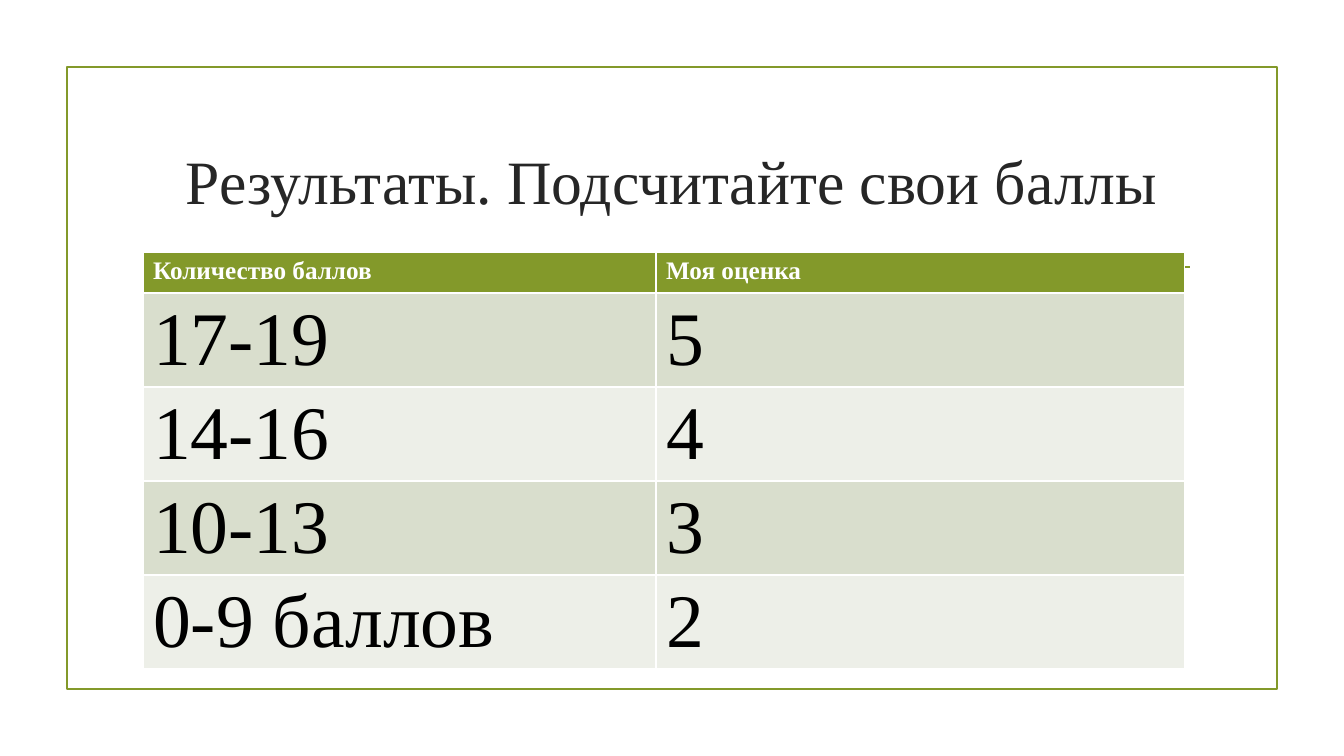
from pptx import Presentation
from pptx import util as u
from pptx.dml.color import RGBColor
from pptx.enum import shapes, text
from pptx.oxml.ns import qn
from lxml import etree

TITLE = "Результаты. Подсчитайте свои баллы"
GRADES = [
    ("Количество баллов", "Моя оценка"),
    ("17-19", "5"),
    ("14-16", "4"),
    ("10-13", "3"),
    ("0-9 баллов", "2"),
]
FONT = "Times New Roman"
GREEN = "83992A"
BANDS = ("EDEFE8", "D9DECD")
COLUMN_WIDTHS = (513, 529)
HEADER_HEIGHT, ROW_HEIGHT = 41, 94


def px(value):
    return u.Emu(round(value * 914400 / 100.8))


def box(*lengths):
    return [px(length) for length in lengths]


def color(value):
    return RGBColor.from_string(value)


def style_text(paragraph, size, value, bold=False):
    for run in paragraph.runs:
        run.font.name = FONT
        run.font.size = u.Pt(size)
        run.font.bold = bold
        run.font.color.rgb = color(value)


def style_line(shape):
    shape.line.color.rgb = color(GREEN)
    shape.line.width = u.Pt(1.25)


def add_frame(slide):
    frame = slide.shapes.add_shape(shapes.MSO_SHAPE.RECTANGLE, *box(67, 67, 1210, 622))
    frame.shadow.inherit = False
    frame.fill.background()
    style_line(frame)
    rule = slide.shapes.add_connector(
        shapes.MSO_CONNECTOR.STRAIGHT, *box(154, 267, 1190, 267))
    style_line(rule)
    etree.SubElement(rule._element.spPr, qn("a:effectLst"))


def fill_title(slide):
    title = slide.shapes.title
    title.left, title.top, title.width, title.height = box(143, 108, 1058, 144)
    frame = title.text_frame
    frame.text = TITLE
    frame.vertical_anchor = text.MSO_ANCHOR.MIDDLE
    frame.paragraphs[0].alignment = text.PP_ALIGN.CENTER
    style_text(frame.paragraphs[0], 44, "262626")


def add_grades(slide):
    heights = [HEADER_HEIGHT] + [ROW_HEIGHT] * (len(GRADES) - 1)
    table = slide.shapes.add_table(
        len(GRADES), len(COLUMN_WIDTHS),
        *box(143, 252, sum(COLUMN_WIDTHS), sum(heights))).table
    for column, width in zip(table.columns, COLUMN_WIDTHS):
        column.width = px(width)
    for index, (row, height) in enumerate(zip(table.rows, heights)):
        row.height = px(height)
        header = index == 0
        for cell, wording in zip(row.cells, GRADES[index]):
            cell.fill.solid()
            cell.fill.fore_color.rgb = color(GREEN if header else BANDS[index % 2])
            cell.text_frame.text = wording
            style_text(cell.text_frame.paragraphs[0], 18 if header else 54,
                       "FFFFFF" if header else "000000", header)


def main():
    presentation = Presentation()
    presentation.slide_width, presentation.slide_height = box(1344, 756)
    slide = presentation.slides.add_slide(presentation.slide_layouts[5])
    add_frame(slide)
    fill_title(slide)
    add_grades(slide)
    presentation.save("out.pptx")


if __name__ == "__main__":
    main()
